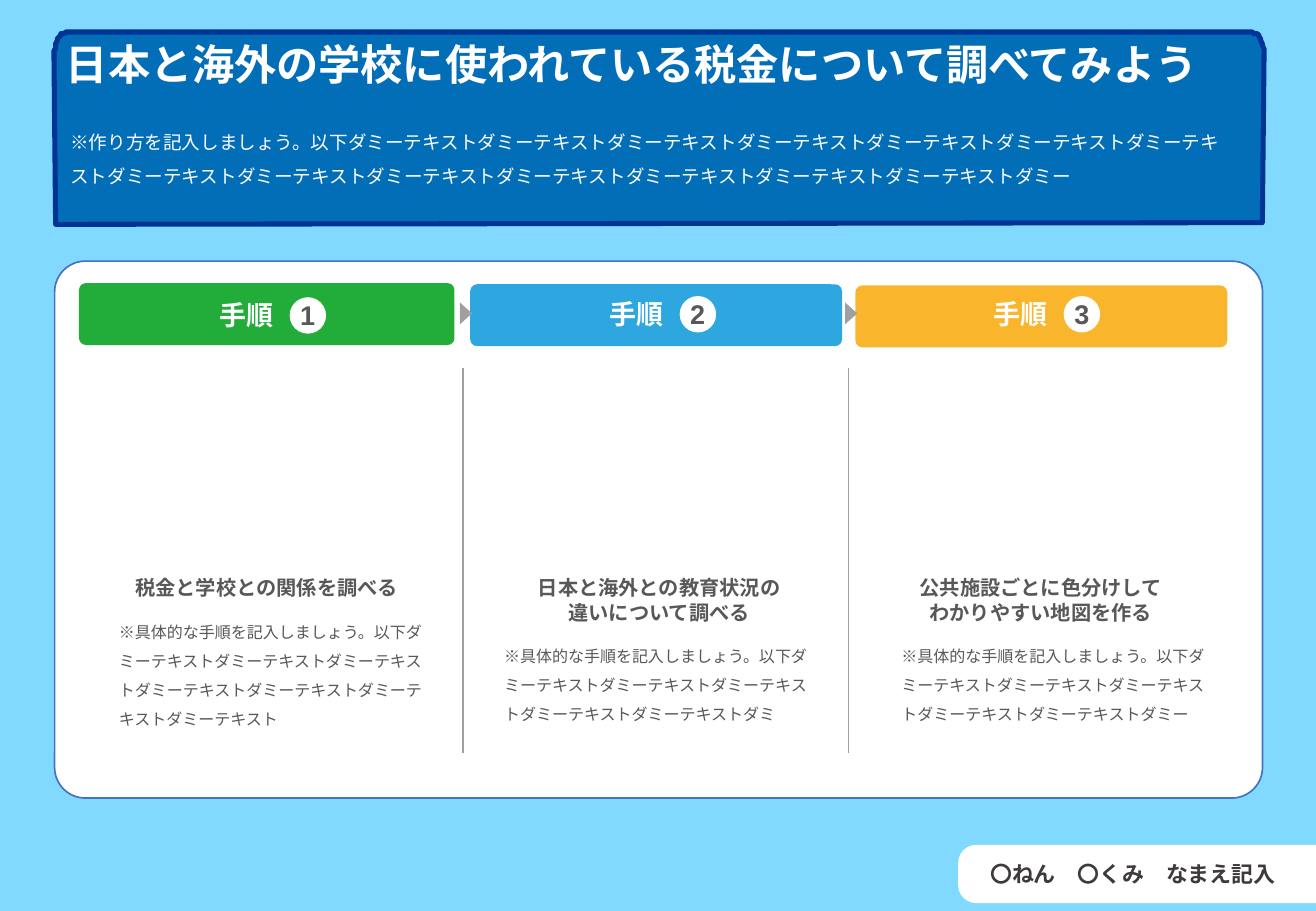
"""Build a worksheet slide on school taxes with a title panel and three steps."""
from lxml import etree
from pptx import Presentation
from pptx.dml.color import RGBColor
from pptx.enum.lang import MSO_LANGUAGE_ID
from pptx.enum.shapes import MSO_CONNECTOR, MSO_SHAPE
from pptx.enum.text import MSO_ANCHOR, PP_ALIGN
from pptx.oxml.ns import qn
from pptx.util import Pt

JAPANESE = MSO_LANGUAGE_ID.JAPANESE
STRAIGHT = MSO_CONNECTOR.STRAIGHT
ROUNDED, TAB = MSO_SHAPE.ROUNDED_RECTANGLE, MSO_SHAPE.ROUND_2_SAME_RECTANGLE
OVAL, TRIANGLE = MSO_SHAPE.OVAL, MSO_SHAPE.ISOSCELES_TRIANGLE
TOP, MIDDLE = MSO_ANCHOR.TOP, MSO_ANCHOR.MIDDLE
LEFT, CENTER = PP_ALIGN.LEFT, PP_ALIGN.CENTER

DUMMY = "ダミーテキスト"
STEP_NOTE = "※具体的な手順を記入しましょう。以下"
TITLE = "日本と海外の学校に使われている税金について調べてみよう"
INTRO = "※作り方を記入しましょう。以下" + DUMMY * 14 + "ダミー"
PUPIL = "〇ねん　〇くみ　なまえ記入"
STEPS = [
    {"heading": ["税金と学校との関係を調べる"],
     "note": STEP_NOTE + DUMMY * 7,
     "color": "22AC39", "banner": (46.8, 167.8, 222.5),
     "label": (98.64, 173.5), "heading_left": 72, "note_left": 63.36},
    {"heading": ["日本と海外との教育状況の", "違いについて調べる"],
     "note": STEP_NOTE + DUMMY * 5 + "ダミ",
     "color": "2EA7E1", "banner": (278.64, 168.5, 220.3),
     "label": (329.76, 172.8), "heading_left": 304.56, "note_left": 291.6},
    {"heading": ["公共施設ごとに色分けして", "わかりやすい地図を作る"],
     "note": STEP_NOTE + DUMMY * 5 + "ダミー",
     "color": "F9B62C", "banner": (506.88, 169.2, 220.3),
     "label": (557.28, 172.8), "heading_left": 530.64, "note_left": 527.04},
]
DIVIDERS = [274.32, 502.56]
THEME = {
    "font": "Arial", "sky": "82D9FF", "panel": "036EB8", "panel_edge": "003396",
    "white": "FFFFFF", "card_edge": "4472C4", "gray": "9FA0A0",
    "ink": "595757", "pupil_ink": "3E3A39",
    "title": 25, "intro": 11, "label": 16, "heading": 12, "note": 9.5, "pupil": 13,
}

deck = Presentation()
deck.slide_width, deck.slide_height = Pt(779.76), Pt(540)
slide = deck.slides.add_slide(deck.slide_layouts[6])
slide.background.fill.solid()
slide.background.fill.fore_color.rgb = RGBColor.from_string(THEME["sky"])


def paint(shape, fill, edge=None, width=1):
    """Give a shape a flat fill and an optional edge."""
    shape.shadow.inherit = False
    shape.fill.solid()
    shape.fill.fore_color.rgb = RGBColor.from_string(fill)
    if edge:
        shape.line.color.rgb = RGBColor.from_string(edge)
        shape.line.width = Pt(width)
    else:
        shape.line.fill.background()


def add_block(kind, box, fill, edge=None, corners=(), turn=0):
    """Add a preset shape."""
    block = slide.shapes.add_shape(kind, *map(Pt, box))
    for index, corner in enumerate(corners):
        block.adjustments[index] = corner
    block.rotation = turn
    paint(block, fill, edge)


def write(holder, paragraphs, size, bold=False, align=LEFT, anchor=TOP, spacing=None):
    """Fill a shape with paragraphs made of (text, color) runs."""
    frame = holder.text_frame
    frame.word_wrap = True
    frame.vertical_anchor = anchor
    for index, runs in enumerate(paragraphs):
        paragraph = frame.add_paragraph() if index else frame.paragraphs[0]
        paragraph.alignment = align
        if spacing:
            paragraph.line_spacing = spacing
        for text, color in runs:
            run = paragraph.add_run()
            run.text = text
            run.font.name = THEME["font"]
            run.font.size = Pt(THEME[size])
            run.font.bold = bold
            run.font.language_id = JAPANESE
            run.font.color.rgb = RGBColor.from_string(THEME[color])
            east_asian = etree.SubElement(run.font._element, qn("a:ea"))
            east_asian.set("typeface", THEME["font"])


def add_text(box, paragraphs, size, **style):
    """Add a text box."""
    write(slide.shapes.add_textbox(*map(Pt, box)), paragraphs, size, **style)


def curve(start, pull_start, pull_end, end, steps=12):
    """Return points along a cubic curve."""
    return [tuple((1 - t) ** 3 * a + 3 * t * (1 - t) ** 2 * b
                  + 3 * t * t * (1 - t) * c + t ** 3 * d
                  for a, b, c, d in zip(start, pull_start, pull_end, end))
            for t in (step / steps for step in range(steps + 1))]


left_corner = curve((32.4, 31.7), (32.4, 25.2), (35.3, 19.4), (38.9, 19.4))
right_corner = curve((742.3, 19.4), (745.9, 19.4), (748.8, 25.2), (748.8, 31.7))
outline = left_corner + right_corner + [(748.1, 131.8), (33.1, 133.2)]
builder = slide.shapes.build_freeform(*outline[0], scale=Pt(1))
builder.add_line_segments(outline[1:], close=True)
title_panel = builder.convert_to_shape()
paint(title_panel, THEME["panel"], THEME["panel_edge"], 3)
write(title_panel, [[(TITLE, "white")]], "title", bold=True)
add_text((34.56, 67.68, 702, 45.36), [[(INTRO, "white")]], "intro", spacing=1.5)

add_block(TAB, (656.64, 411.84, 34.56, 212.4), THEME["white"],
          corners=(0.31, 0), turn=270)
add_text((579.6, 507.6, 200.88, 20.88), [[(PUPIL, "pupil_ink")]], "pupil",
         bold=True, anchor=MIDDLE)

add_block(ROUNDED, (32.4, 154.8, 715.7, 318.24), THEME["white"],
          THEME["card_edge"], corners=(0.057,))

for number, step in enumerate(STEPS, 1):
    banner_left, banner_top, banner_width = step["banner"]
    add_block(ROUNDED, (banner_left, banner_top, banner_width, 36.72),
              step["color"], corners=(0.111,))
    label_left, label_top = step["label"]
    add_block(OVAL, (label_left + 73, label_top + 2.7, 21.6, 21.6), THEME["white"])
    add_text((label_left, label_top, 119.52, 26.64),
             [[("手順　", "white"), (str(number), "ink")]],
             "label", bold=True, align=CENTER)
    heading_top, heading_height = 337.68, 7.2 + 14.4 * len(step["heading"])
    add_text((step["heading_left"], heading_top, 172.08, heading_height),
             [[(line, "ink")] for line in step["heading"]],
             "heading", bold=True, align=CENTER)
    add_text((step["note_left"], heading_top + heading_height + 0.5, 196.56, 74.88),
             [[(step["note"], "ink")]], "note", spacing=1.5)

for divider_x in DIVIDERS:
    add_block(TRIANGLE, (divider_x - 4.7, 182.16, 12.96, 7.2), THEME["gray"], turn=90)
    divider = slide.shapes.add_connector(
        STRAIGHT, Pt(divider_x), Pt(218.16), Pt(divider_x), Pt(446.4))
    divider.line.color.rgb = RGBColor.from_string(THEME["gray"])
    divider.line.width = Pt(0.75)
    etree.SubElement(divider._element.spPr, qn("a:effectLst"))

deck.save("out.pptx")
